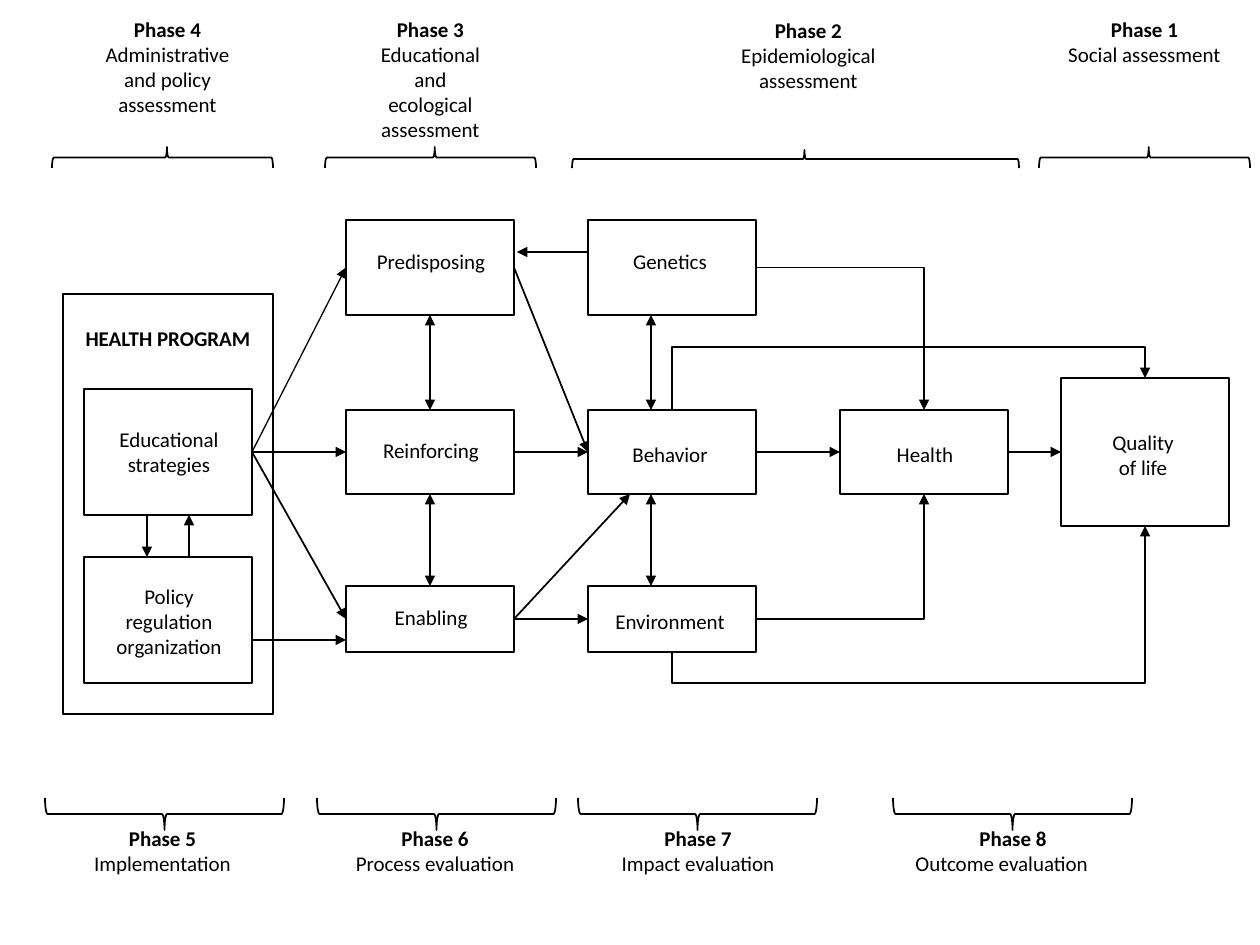
from lxml import etree
from pptx import Presentation
from pptx.dml.color import RGBColor
from pptx.enum.shapes import MSO_CONNECTOR, MSO_SHAPE
from pptx.enum.text import PP_ALIGN
from pptx.oxml.ns import qn
from pptx.util import Pt

EMU_PER_PX = 914400 / 126
STRAIGHT, ELBOW = MSO_CONNECTOR.STRAIGHT, MSO_CONNECTOR.ELBOW
RECTANGLE = MSO_SHAPE.RECTANGLE
LEFT_BRACE, RIGHT_BRACE = MSO_SHAPE.LEFT_BRACE, MSO_SHAPE.RIGHT_BRACE
CENTER, LEFT = PP_ALIGN.CENTER, PP_ALIGN.LEFT
TOP_SIDE, LEFT_SIDE, BOTTOM_SIDE, RIGHT_SIDE = range(4)
BLACK = "000000"
LINE_HEIGHT, TEXT_PADDING = 25, 13

# name: box, label offset, label lines
BOXES = {
    "quality": ((1061, 378, 168, 148), (-3, 45), ["Quality", "of life"]),
    "health": ((840, 410, 168, 84), (0, 25), ["Health"]),
    "behavior": ((588, 410, 168, 84), (-3, 25), ["Behavior"]),
    "environment": ((588, 586, 168, 66), (-3, 16), ["Environment"]),
    "genetics": ((588, 220, 168, 95), (-3, 22), ["Genetics"]),
    "predisposing": ((346, 220, 168, 95), (0, 22), ["Predisposing"]),
    "reinforcing": ((346, 410, 168, 84), (0, 21), ["Reinforcing"]),
    "enabling": ((346, 586, 168, 66), (0, 12), ["Enabling"]),
    "education": ((84, 389, 168, 126), (0, 31), ["Educational strategies"]),
    "policy": ((84, 557, 168, 126), (0, 20), ["Policy", "regulation", "organization"]),
}

# start, end, options; an end is a point or a box name with a side
ARROWS = [
    (("health", RIGHT_SIDE), ("quality", LEFT_SIDE), {}),
    (("behavior", RIGHT_SIDE), ("health", LEFT_SIDE), {}),
    (("predisposing", RIGHT_SIDE), ("behavior", LEFT_SIDE), {}),
    (("reinforcing", RIGHT_SIDE), ("behavior", LEFT_SIDE), {}),
    (("enabling", RIGHT_SIDE), ("environment", LEFT_SIDE), {}),
    (("enabling", RIGHT_SIDE), (630, 494), {}),
    (("education", RIGHT_SIDE), ("reinforcing", LEFT_SIDE), {}),
    (("education", RIGHT_SIDE), ("predisposing", LEFT_SIDE), {"weight": 0.75}),
    (("education", RIGHT_SIDE), ("enabling", LEFT_SIDE), {}),
    ((252, 640), (346, 640), {}),
    ((147, 515), (147, 557), {}),
    ((189, 557), (189, 515), {}),
    ((588, 252), (517, 252), {}),
    ((651, 315), (651, 410), {"both": True}),
    ((651, 494), (651, 586), {"both": True}),
    (("predisposing", BOTTOM_SIDE), ("reinforcing", TOP_SIDE), {"both": True}),
    (("reinforcing", BOTTOM_SIDE), ("enabling", TOP_SIDE), {"both": True}),
    (("genetics", RIGHT_SIDE), ("health", TOP_SIDE), {"kind": ELBOW, "weight": 0.75}),
    (("environment", RIGHT_SIDE), ("health", BOTTOM_SIDE), {"kind": ELBOW}),
    (("behavior", TOP_SIDE), ("quality", TOP_SIDE),
     {"kind": ELBOW, "turn_y": 347, "weight": 0.75}),
    (("environment", BOTTOM_SIDE), ("quality", BOTTOM_SIDE),
     {"kind": ELBOW, "turn_y": 683}),
]

# brace box, text left, text top, text width, lines after the heading
TOP_PHASES = {
    "Phase 1": ((1039, 147, 211, 21), 1050, 10, 189, ["Social assessment"]),
    "Phase 2": ((572, 150, 447, 18), 714, 11, 189, ["Epidemiological assessment"]),
    "Phase 3": ((325, 147, 211, 21), 336, 10, 189,
                ["Educational", "and", "ecological assessment"]),
    "Phase 4": ((52, 147, 221, 21), 73, 10, 189,
                ["Administrative", "and policy assessment"]),
}
BOTTOM_PHASES = {
    "Phase 5": ((45, 798, 239, 32), 73, 819, 179, ["Implementation"]),
    "Phase 6": ((317, 798, 239, 32), 325, 819, 220, ["Process evaluation"]),
    "Phase 7": ((578, 798, 239, 32), 588, 819, 220, ["Impact evaluation"]),
    "Phase 8": ((893, 798, 239, 32), 903, 819, 220, ["Outcome evaluation"]),
}


def px(value):
    return round(value * EMU_PER_PX)


def color(hex_string):
    return RGBColor.from_string(hex_string)


def set_line(shape, weight=1):
    shape.line.color.rgb = color(BLACK)
    shape.line.width = Pt(weight)


def add_text(slide, box, lines, bold=False, heading=False, last_align=CENTER):
    shape = slide.shapes.add_textbox(*map(px, box))
    frame = shape.text_frame
    frame.word_wrap = True
    for index, line in enumerate(lines):
        paragraph = frame.paragraphs[0] if index == 0 else frame.add_paragraph()
        paragraph.alignment = last_align if index == len(lines) - 1 else CENTER
        run = paragraph.add_run()
        run.text = line
        run.font.name = "Calibri"
        run.font.size = Pt(12)
        run.font.bold = bold or (heading and index == 0)
        run.font.color.rgb = color(BLACK)


def add_outline(slide, box, kind=RECTANGLE):
    shape = slide.shapes.add_shape(kind, *map(px, box))
    shape.shadow.inherit = False
    shape.fill.background()
    set_line(shape)
    return shape


def add_brace(slide, box, kind, tip):
    """Lay a brace on its side so that it fills the box."""
    left, top, width, height = box
    upright = (left + (width - height) / 2, top + (height - width) / 2, height, width)
    brace = add_outline(slide, upright, kind)
    brace.rotation = 90
    brace.adjustments[0] = 0.08
    brace.adjustments[1] = tip


def add_phases(slide, phases, kind, tip):
    for title, (brace_box, left, top, width, lines) in phases.items():
        add_brace(slide, brace_box, kind, tip)
        height = LINE_HEIGHT * (len(lines) + 1) + TEXT_PADDING
        add_text(slide, (left, top, width, height), [title, *lines], heading=True,
                 last_align=LEFT if title == "Phase 8" else CENTER)


def add_program(slide, box):
    left, top, width, _ = box
    add_outline(slide, box)
    add_text(slide, (left, top + 25, width, 38), ["HEALTH PROGRAM"], bold=True)


def add_labelled_box(slide, box, offset, lines):
    left, top, _, _ = box
    shape = add_outline(slide, box)
    height = LINE_HEIGHT * len(lines) + TEXT_PADDING
    add_text(slide, (left + offset[0], top + offset[1], 170, height), lines)
    return shape


def end_point(end):
    if end[0] not in BOXES:
        return end
    left, top, width, height = BOXES[end[0]][0]
    return [(left + width / 2, top), (left, top + height / 2),
            (left + width / 2, top + height), (left + width, top + height / 2)][end[1]]


def shape_elbow(connector, start, end, turn_y):
    """One bend, or two bends by way of the level turn_y."""
    geometry = connector._element.spPr.find(qn("a:prstGeom"))
    if turn_y is None:
        geometry.set("prst", "bentConnector2")
        return
    (x1, y1), (x2, y2) = start, end
    width, height = abs(y2 - y1), abs(x2 - x1)
    connector.left = px((x1 + x2 - width) / 2)
    connector.top = px((y1 + y2 - height) / 2)
    connector.width, connector.height = px(width), px(height)
    transform = connector._element.spPr.find(qn("a:xfrm"))
    for name, value in (("rot", "5400000"), ("flipH", "1"), ("flipV", "1")):
        transform.set(name, value)
    guides = geometry.find(qn("a:avLst"))
    if guides is None:
        guides = etree.SubElement(geometry, qn("a:avLst"))
    share = round((turn_y - y1) / (y2 - y1) * 100000)
    etree.SubElement(guides, qn("a:gd"), name="adj1", fmla=f"val {share}")


def add_arrow(slide, shapes, start, end, kind=STRAIGHT, weight=1, both=False, turn_y=None):
    points = end_point(start), end_point(end)
    connector = slide.shapes.add_connector(kind, *(px(v) for point in points for v in point))
    if start[0] in shapes:
        connector.begin_connect(shapes[start[0]], start[1])
    if end[0] in shapes:
        connector.end_connect(shapes[end[0]], end[1])
    if kind == ELBOW:
        shape_elbow(connector, *points, turn_y)
    set_line(connector, weight)
    line = connector.line._get_or_add_ln()
    for tag in ("a:headEnd", "a:tailEnd") if both else ("a:tailEnd",):
        etree.SubElement(line, qn(tag), type="triangle")
    etree.SubElement(connector._element.spPr, qn("a:effectLst"))


def main():
    presentation = Presentation()
    presentation.slide_width, presentation.slide_height = px(1260), px(945)
    slide = presentation.slides.add_slide(presentation.slide_layouts[6])
    # Model boxes
    add_program(slide, (63, 294, 210, 420))
    shapes = {name: add_labelled_box(slide, *parts) for name, parts in BOXES.items()}
    # Relations
    for start, end, options in ARROWS:
        add_arrow(slide, shapes, start, end, **options)
    # Phases above and below
    add_phases(slide, TOP_PHASES, LEFT_BRACE, 0.48)
    add_phases(slide, BOTTOM_PHASES, RIGHT_BRACE, 0.5)
    presentation.save("out.pptx")


if __name__ == "__main__":
    main()
